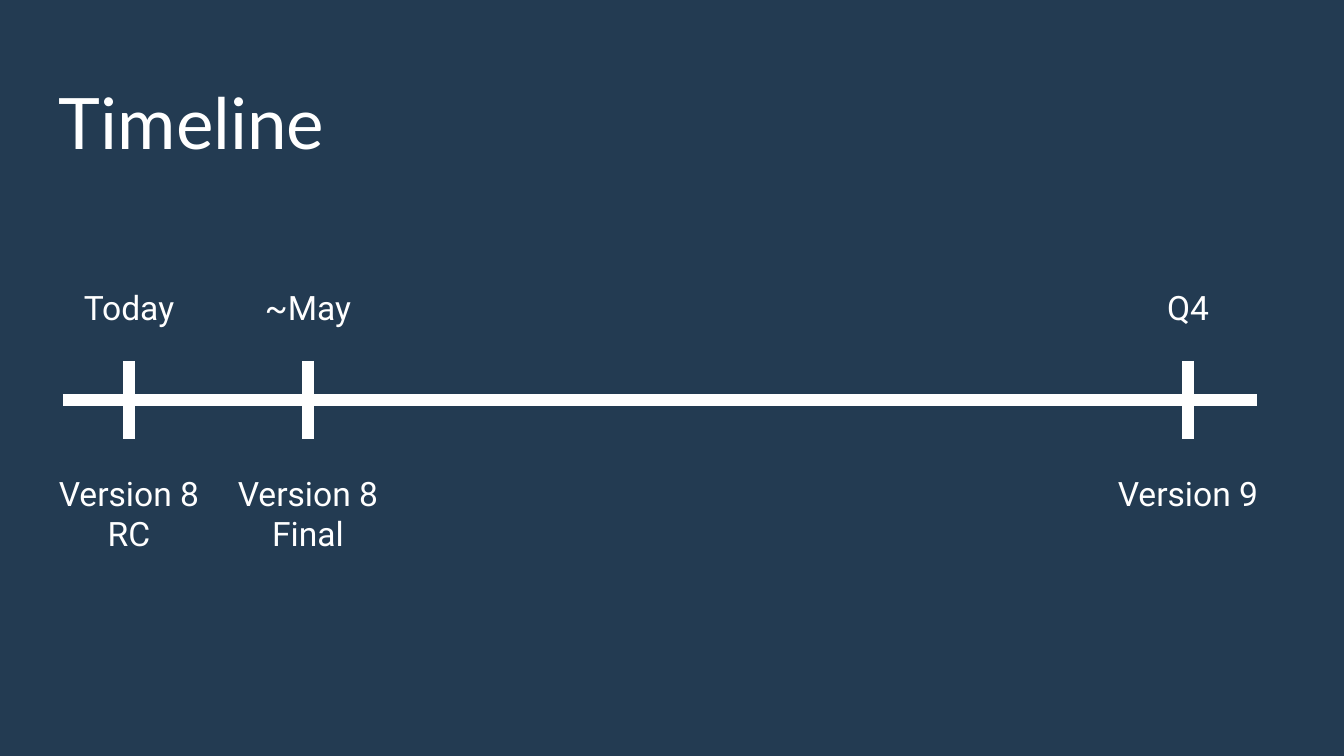
from lxml.etree import SubElement
from pptx import Presentation
from pptx.dml.color import RGBColor
from pptx.enum.shapes import MSO_CONNECTOR
from pptx.enum.text import MSO_ANCHOR as ANCHOR, PP_ALIGN as ALIGN
from pptx.oxml.ns import qn
from pptx.util import Pt

PX = 914400 / 134.4
COLORS = {"bg": "233B52", "fg": "FFFFFF"}
WHITE = RGBColor.from_string(COLORS["fg"])


def px(*lengths):
    return [round(n * PX) for n in lengths]


def write(sp, text, font, size, align, anchor):
    tf = sp.text_frame
    tf.word_wrap = True
    tf.vertical_anchor = anchor
    tf.margin_left = tf.margin_top = tf.margin_right = tf.margin_bottom = px(13)[0]
    p = tf.paragraphs[0]
    p.text = text
    p.alignment = align
    p.font.name = font
    p.font.size = Pt(size)
    p.font.color.rgb = WHITE


prs = Presentation()
prs.slide_width, prs.slide_height = px(1344, 756)
s = prs.slides.add_slide(prs.slide_layouts[5])
s.background.fill.solid()
s.background.fill.fore_color.rgb = RGBColor.from_string(COLORS["bg"])

title = s.shapes.title
title.left, title.top, title.width, title.height = px(46, 66, 1253, 85)
write(title, "Timeline", "Lato", 38, ALIGN.LEFT, ANCHOR.TOP)

milestones = [
    (129, "Today", "Version 8 RC"),
    (308, "~May", "Version 8 Final"),
    (1188, "Q4", "Version 9"),
]

axis = (63, 400, 1257, 400)
ticks = [(x, 361, x, 439) for x, _, _ in milestones]
for ends in [axis, *ticks]:
    line = s.shapes.add_connector(MSO_CONNECTOR.STRAIGHT, *px(*ends))
    line.line.color.rgb = WHITE
    line.line.width = Pt(6)
    SubElement(line._element.spPr, qn("a:effectLst"))

label_w, label_h = 168, 108
for x, date, version in milestones:
    for text, top, anchor in [(date, 232, ANCHOR.BOTTOM), (version, 460, ANCHOR.TOP)]:
        sp = s.shapes.add_textbox(*px(x - label_w / 2, top, label_w, label_h))
        write(sp, text, "Roboto", 18, ALIGN.CENTER, anchor)

prs.save("out.pptx")
